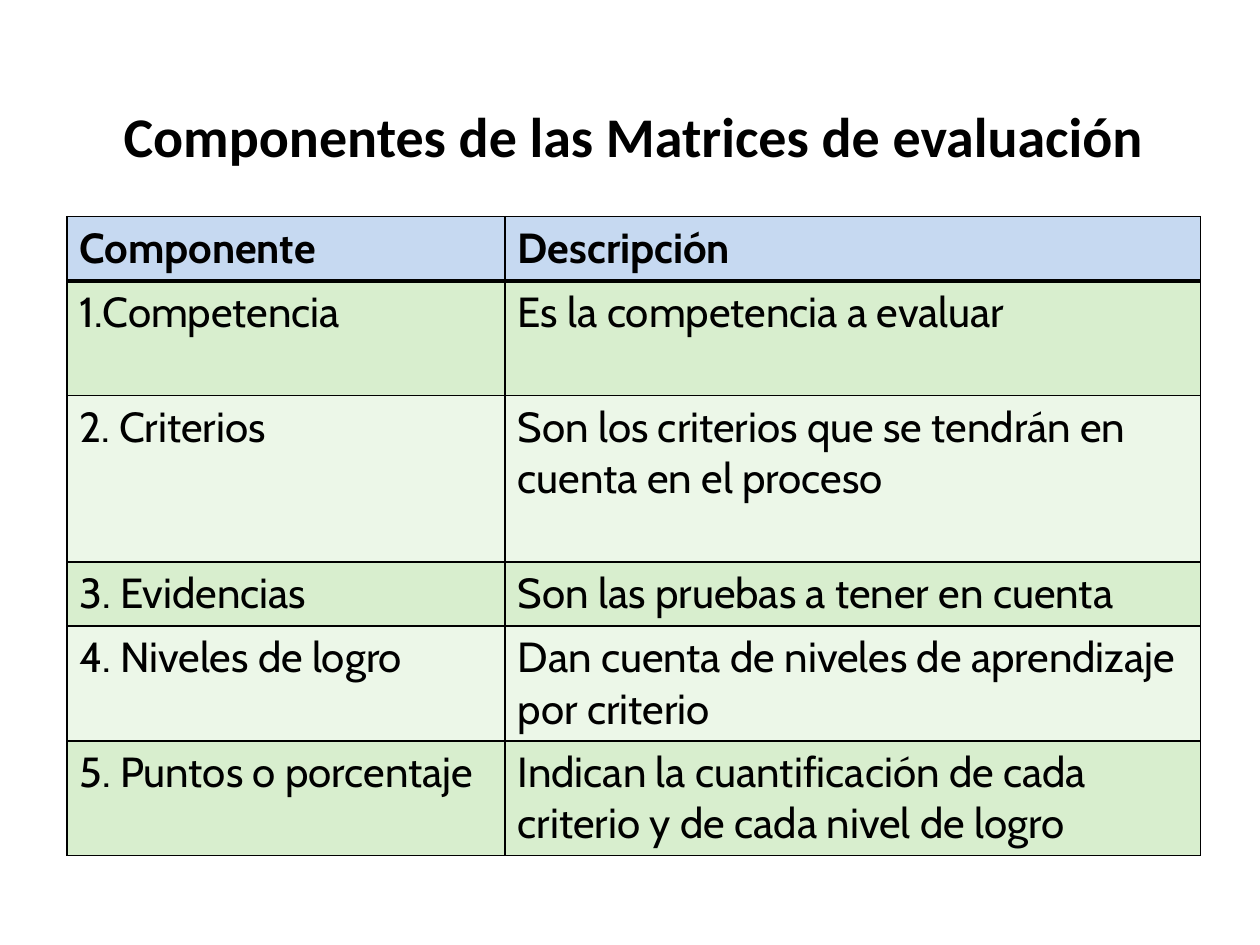
from dataclasses import dataclass

from lxml import etree
from pptx import Presentation
from pptx.dml.color import RGBColor
from pptx.enum.text import MSO_ANCHOR, PP_ALIGN
from pptx.oxml.ns import qn
from pptx.util import Inches, Pt

CENTER = PP_ALIGN.CENTER
MIDDLE = MSO_ANCHOR.MIDDLE
BLANK_LAYOUT = 6


@dataclass(frozen=True)
class Theme:
    ink: str = "000000"
    header_fill: str = "C6D9F1"
    band_fills: tuple = ("D8EECE", "ECF7E8")
    title_font: str = "Calibri"
    table_font: str = "Cabin"
    title_size: int = 32
    table_size: int = 24
    thin_line: int = 1
    header_line: int = 3


class SlideBuilder:
    """Adds styled elements to one slide."""

    def __init__(self, slide, theme):
        self.slide = slide
        self.theme = theme

    def style_text(self, paragraph, font_name, size, bold):
        for run in paragraph.runs:
            run.font.name = font_name
            run.font.size = Pt(size)
            run.font.bold = bold
            run.font.color.rgb = RGBColor.from_string(self.theme.ink)

    def add_title(self, wording, left, top, width, height):
        box = self.slide.shapes.add_textbox(
            Inches(left), Inches(top), Inches(width), Inches(height))
        frame = box.text_frame
        frame.word_wrap = True
        frame.vertical_anchor = MIDDLE
        frame.text = wording
        heading = frame.paragraphs[0]
        heading.alignment = CENTER
        self.style_text(heading, self.theme.title_font, self.theme.title_size, True)

    def add_borders(self, cell, top, bottom):
        properties = cell._tc.get_or_add_tcPr()
        thin = self.theme.thin_line
        for side, points in (("L", thin), ("R", thin), ("T", top), ("B", bottom)):
            line = etree.SubElement(properties, qn(f"a:ln{side}"), w=str(Pt(points)))
            fill = etree.SubElement(line, qn("a:solidFill"))
            etree.SubElement(fill, qn("a:srgbClr"), val=self.theme.ink)

    def add_number(self, paragraph):
        properties = paragraph._p.get_or_add_pPr()
        properties.set("marL", "0")
        properties.set("indent", "0")
        etree.SubElement(properties, qn("a:buAutoNum"), type="arabicPeriod")

    def fill_cell(self, cell, wording, row):
        theme = self.theme
        is_header = row == 0
        self.add_borders(
            cell,
            top=theme.header_line if row == 1 else theme.thin_line,
            bottom=theme.header_line if is_header else theme.thin_line)
        band = theme.band_fills[(row - 1) % 2]
        cell.fill.solid()
        cell.fill.fore_color.rgb = RGBColor.from_string(
            theme.header_fill if is_header else band)
        cell.text = wording
        self.style_text(
            cell.text_frame.paragraphs[0], theme.table_font, theme.table_size, is_header)

    def add_table(self, rows, left, top, column_widths, row_heights):
        table = self.slide.shapes.add_table(
            len(rows), len(column_widths), Inches(left), Inches(top),
            Inches(sum(column_widths)), Inches(sum(row_heights))).table
        for column, width in zip(table.columns, column_widths):
            column.width = Inches(width)
        for row, (wordings, height) in enumerate(zip(rows, row_heights)):
            table.rows[row].height = Inches(height)
            for column, wording in enumerate(wordings):
                self.fill_cell(table.cell(row, column), wording, row)
        return table


COMPONENTS = (
    ("Componente", "Descripción"),
    ("Competencia", "Es la competencia a evaluar"),
    ("2. Criterios", "Son los criterios que se tendrán en cuenta en el proceso"),
    ("3. Evidencias", "Son las pruebas a tener en cuenta"),
    ("4. Niveles de logro", "Dan cuenta de niveles de aprendizaje por criterio"),
    ("5. Puntos o porcentaje",
     "Indican la cuantificación de cada criterio y de cada nivel de logro"),
)
ONE_LINE, TWO_LINES, THREE_LINES = 0.51, 0.91, 1.32


def main():
    presentation = Presentation()
    presentation.slide_width = Inches(10)
    presentation.slide_height = Inches(7.5)
    slide = presentation.slides.add_slide(presentation.slide_layouts[BLANK_LAYOUT])
    builder = SlideBuilder(slide, Theme())
    builder.add_title("Componentes de las Matrices de evaluación", 0.53, 0.45, 9, 1.25)
    components = builder.add_table(
        COMPONENTS, 0.53, 1.72, (3.48, 5.52),
        (ONE_LINE, TWO_LINES, THREE_LINES, ONE_LINE, TWO_LINES, TWO_LINES))
    builder.add_number(components.cell(1, 0).text_frame.paragraphs[0])
    presentation.save("out.pptx")


if __name__ == "__main__":
    main()
